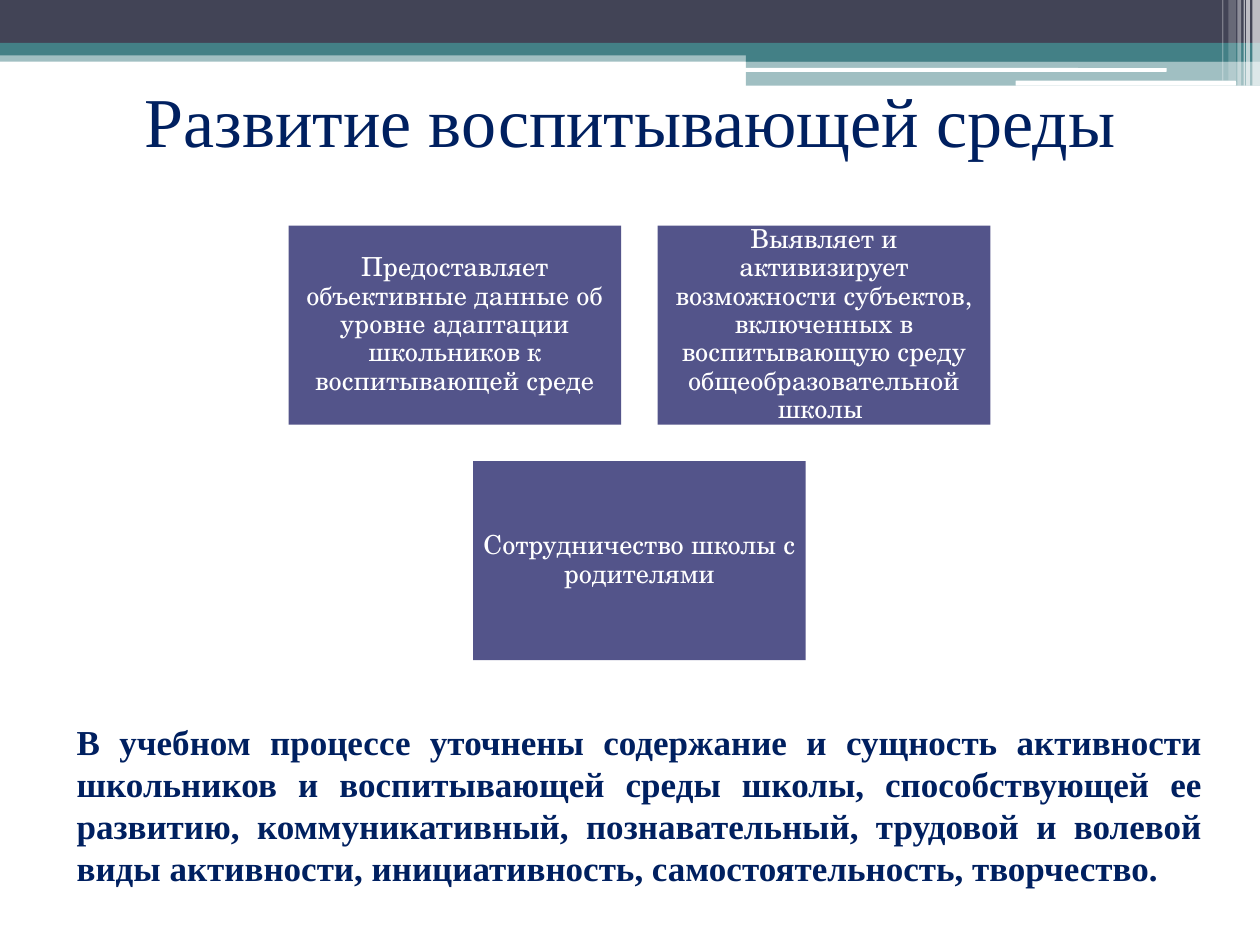
import pptx
import pptx.util
import pptx.dml.color
import pptx.enum.shapes
import pptx.enum.text
import pptx.oxml
import pptx.oxml.ns

Inches = pptx.util.Inches
SHAPES = pptx.enum.shapes.MSO_SHAPE
ALIGN = pptx.enum.text.PP_ALIGN
ANCHOR = pptx.enum.text.MSO_ANCHOR

COLORS = {"slate": "424456", "teal": "438086", "violet": "53548A",
          "navy": "002060", "white": "FFFFFF"}
SERIF, SCHOOL = "Times New Roman", "TeX Gyre Schola"

# Header bands: left, top, width, height, colour, opacity in percent
BANDS = [
    (0, 0.4, 10, 0.09, "teal", 50),
    (0, 0, 10, 0.34, "slate", 100),
    (0, 0.34, 10, 0.1, "teal", 100),
    (5.92, 0.39, 4.08, 0.1, "teal", 100),
    (5.92, 0.48, 4.08, 0.2, "teal", 50),
]
# White rounded rules: left, top, width, height
RULES = [(5.91, 0.54, 3.35, 0.03), (8.06, 0.64, 1.75, 0.04)]
# White vertical stripes: left, width, height, opacity in percent
STRIPES = [(9.94, 0.06, 0.68, 65), (9.89, 0.03, 0.68, 65), (9.87, 0.01, 0.68, 60),
           (9.82, 0.03, 0.68, 40), (9.75, 0.06, 0.64, 20), (9.7, 0.01, 0.64, 30)]

# Cards: column and row on the grid, text
CARD_WIDTH, CARD_HEIGHT, CARD_GAP = 2.64, 1.58, 0.29
GRID_LEFT, GRID_TOP = 2.29, 1.79
CARDS = [
    (0, 0, "Предоставляет объективные данные об уровне адаптации школьников "
           "к воспитывающей среде"),
    (1, 0, "Выявляет и активизирует возможности субъектов, включенных в "
           "воспитывающую среду общеобразовательной школы "),
    (0.5, 1, "Сотрудничество школы с родителями"),
]
SUMMARY = ("В учебном процессе уточнены содержание и сущность активности школьников "
           "и воспитывающей среды школы, способствующей ее развитию, коммуникативный, "
           "познавательный, трудовой и волевой виды активности, инициативность, "
           "самостоятельность, творчество.")


def rgb(name):
    return pptx.dml.color.RGBColor.from_string(COLORS[name])


def write(box, text, font=SERIF, size=20, color="navy", bold=False, align=ALIGN.CENTER,
          anchor=ANCHOR.MIDDLE, inset=None, spacing=None):
    frame = box.text_frame
    frame.word_wrap = True
    frame.auto_size = pptx.enum.text.MSO_AUTO_SIZE.NONE
    frame.vertical_anchor = anchor
    if inset is not None:
        frame.margin_left = frame.margin_right = Inches(inset)
        frame.margin_top = frame.margin_bottom = Inches(inset)
    para = frame.paragraphs[0]
    para.alignment = align
    if spacing:
        para.line_spacing = spacing
    span = para.add_run()
    span.text = text
    span.font.name = font
    span.font.size = pptx.util.Pt(size)
    span.font.bold = bold
    span.font.color.rgb = rgb(color)


def add_block(page, left, top, width, height, color, opacity=100, kind=SHAPES.RECTANGLE):
    block = page.shapes.add_shape(kind, *map(Inches, (left, top, width, height)))
    block.shadow.inherit = False
    block.fill.solid()
    block.fill.fore_color.rgb = rgb(color)
    block.line.fill.background()
    if opacity < 100:
        tint = block.fill._xPr.find(".//" + pptx.oxml.ns.qn("a:srgbClr"))
        alpha = pptx.oxml.parse_xml(
            f'<a:alpha {pptx.oxml.ns.nsdecls("a")} val="{opacity * 1000}"/>')
        tint.append(alpha)
    return block


def add_header(page):
    for band in BANDS:
        add_block(page, *band)
    for rule in RULES:
        add_block(page, *rule, "white", kind=SHAPES.ROUNDED_RECTANGLE)
    for left, width, height, opacity in STRIPES:
        add_block(page, left, 0, width, height, "white", opacity)


def add_title(page, text):
    title = page.shapes.title
    title.left, title.top, title.width, title.height = map(Inches, (0.5, 0.36, 9, 1.17))
    write(title, text, size=40)
    # Bring the title in front of the header
    page.shapes._spTree.append(title._element)


def add_card(page, column, row, text):
    left = GRID_LEFT + column * (CARD_WIDTH + CARD_GAP)
    top = GRID_TOP + row * (CARD_HEIGHT + CARD_GAP)
    card = add_block(page, left, top, CARD_WIDTH, CARD_HEIGHT, "violet")
    write(card, text, font=SCHOOL, size=15, color="white", inset=0.06, spacing=0.9)


def add_summary(page, text):
    box = page.shapes.add_textbox(*map(Inches, (0.51, 5.67, 9.13, 1.45)))
    write(box, text, bold=True, align=ALIGN.JUSTIFY, anchor=ANCHOR.TOP)


def main():
    deck = pptx.Presentation()
    deck.slide_width, deck.slide_height = Inches(10), Inches(7.5)
    page = deck.slides.add_slide(deck.slide_layouts[5])
    add_header(page)
    add_title(page, "Развитие воспитывающей среды")
    for card in CARDS:
        add_card(page, *card)
    add_summary(page, SUMMARY)
    deck.save("out.pptx")


if __name__ == "__main__":
    main()
